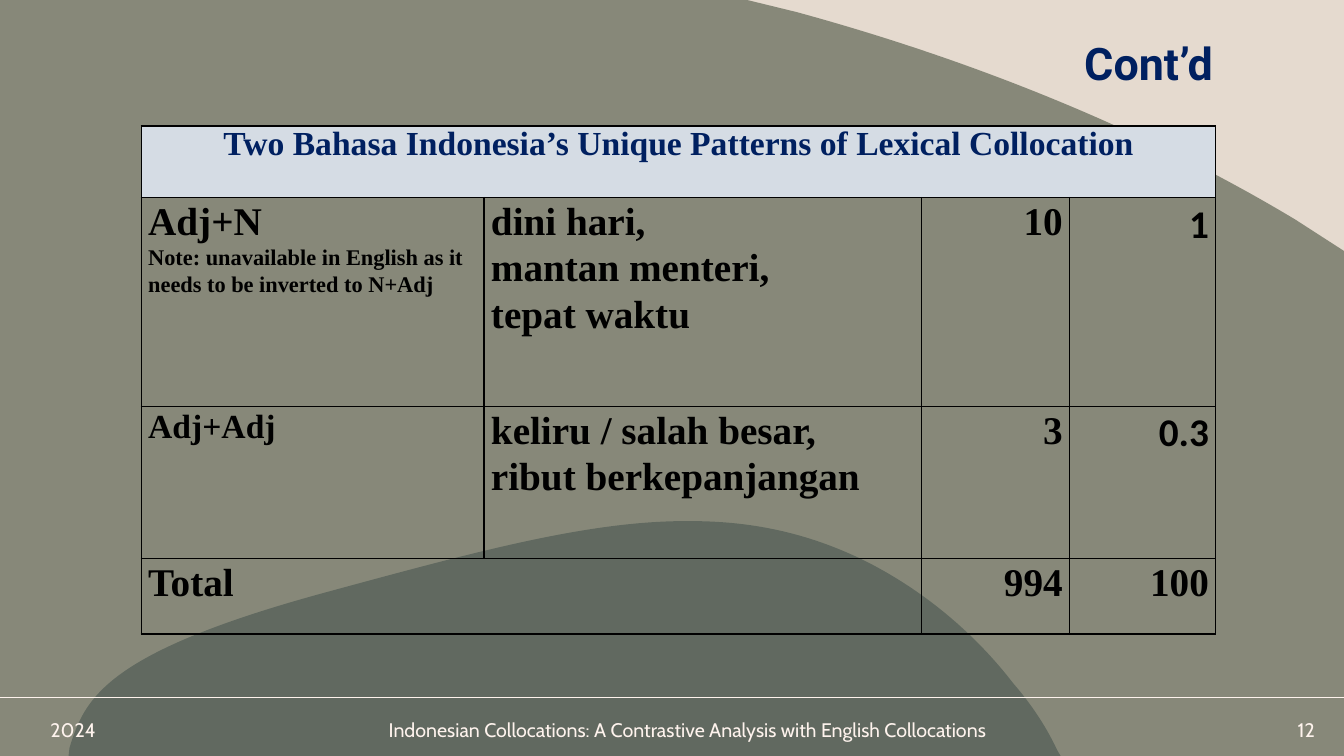
from lxml.etree import SubElement as Sub
from pptx import Presentation
from pptx.dml.color import RGBColor
from pptx.enum.text import MSO_ANCHOR as Anchor, PP_ALIGN as Align
from pptx.oxml.ns import qn
from pptx.util import Inches, Pt

SAND = RGBColor(0xE5, 0xDA, 0xCF)
SLATE = RGBColor(0x5D, 0x6A, 0x76)
OLIVE = RGBColor(0x4E, 0x57, 0x45)
CREAM = RGBColor(0xFE, 0xF3, 0xED)
NAVY = RGBColor(0x00, 0x20, 0x60)
PALE = RGBColor(0xD5, 0xDC, 0xE4)
BLACK = RGBColor(0, 0, 0)
SERIF = "Times New Roman"

HILL = [[(6.85, 5.17)],
        [(7.44, 5.17), (7.99, 5.28), (8.55, 5.55)],
        [(9.3, 5.92), (9.79, 6.44), (10.05, 6.78)],
        [(10.19, 6.94), (10.36, 7.17), (10.49, 7.45)],
        [(10.52, 7.5)], [(0.68, 7.5)], [(0.69, 7.42)],
        [(0.71, 7.35), (0.73, 7.29), (0.76, 7.22)],
        [(0.93, 6.8), (1.35, 6.39), (3.22, 5.88)],
        [(4.73, 5.47), (5.86, 5.16), (6.85, 5.17)]]
FIELD = [[(0, 0)], [(7.41, 0)], [(7.9, 0.12)],
         [(9.73, 0.62), (11.42, 1.32), (12.85, 2.18)],
         [(13.33, 2.49)], [(13.33, 7.5)], [(0, 7.5)]]

COLS = [3.4, 4.34, 1.47, 1.45]
ROWS = [0.71, 2.07, 1.51, 0.75]
CELLS = [
    [[("Two Bahasa Indonesia’s Unique Patterns of Lexical Collocation", 24)],
     [], [], []],
    [[("Adj+N", 28), ("Note: unavailable in English as it", 16),
      ("needs to be inverted to N+Adj", 16)],
     [("dini hari,", 28), ("mantan menteri,", 28), ("tepat waktu", 28)],
     [("10", 28)], [("1", 28)]],
    [[("Adj+Adj", 24)],
     [("keliru / salah besar,", 28), ("ribut berkepanjangan", 28)],
     [("3", 28)], [("0.3", 28)]],
    [[("Total", 28)], [], [("994", 28)], [("100", 28)]],
]


def bend(wave, parts):
    lines = list(wave._element.iter(qn("a:lnTo")))
    for line, part in zip(lines, parts):
        if len(part) == 1:
            continue
        line.tag = qn("a:cubicBezTo")
        for spot, (x, y) in enumerate(part[:2]):
            Sub(line, qn("a:pt"), x=str(Inches(x) - wave.left),
                y=str(Inches(y) - wave.top))
            line.insert(spot, line[-1])


def add_wave(slide, parts, color, alpha):
    first, *rest = [tuple(map(Inches, part[-1])) for part in parts]
    pen = slide.shapes.build_freeform(*first)
    pen.add_line_segments(rest, close=True)
    wave = pen.convert_to_shape()
    bend(wave, parts[1:])
    wave.shadow.inherit = False
    wave.line.fill.background()
    wave.fill.solid()
    wave.fill.fore_color.rgb = color
    tone = wave._element.spPr.find(qn("a:solidFill"))[0]
    Sub(tone, qn("a:alpha"), val=str(alpha * 1000))


def style(para, size, font, color, bold, align):
    para.alignment = align
    for run in para.runs:
        run.font.size = Pt(size)
        run.font.name = font
        run.font.color.rgb = color
        run.font.bold = bold


def add_label(slide, box, text, size, font, color, align, bold=False):
    frame = slide.shapes.add_textbox(*map(Inches, box)).text_frame
    frame.word_wrap = True
    frame.vertical_anchor = Anchor.MIDDLE
    frame.text = text
    style(frame.paragraphs[0], size, font, color, bold, align)
    return frame.paragraphs[0]


def add_back(slide, box):
    left, top, width, height = box
    slide.background.fill.solid()
    slide.background.fill.fore_color.rgb = SAND
    add_wave(slide, HILL, SLATE, 73)
    add_wave(slide, FIELD, OLIVE, 62)
    level = Inches(top + height - 0.58)
    rule = slide.shapes.add_connector(1, Inches(left), level,
                                      Inches(left + width), level)
    rule.line.color.rgb = CREAM
    rule.line.width = Pt(1.25)
    Sub(rule._element.spPr, qn("a:effectLst"))


def add_edges(cell):
    props = cell._tc.get_or_add_tcPr()
    for side in ("lnL", "lnR", "lnT", "lnB"):
        edge = Sub(props, qn("a:" + side), w=str(Pt(1)))
        Sub(Sub(edge, qn("a:solidFill")), qn("a:srgbClr"), val=str(BLACK))


def fill_cell(cell, lines, row, col):
    cell.margin_left = cell.margin_right = Inches(0.07)
    cell.margin_top = cell.margin_bottom = 0
    add_edges(cell)
    if row == 0:
        cell.fill.solid()
        cell.fill.fore_color.rgb = PALE
    else:
        cell.fill.background()
    if not lines:
        return
    align = Align.CENTER if row == 0 else Align.RIGHT if col > 1 else Align.JUSTIFY
    font = "Calibri" if col == 3 and row < 3 else SERIF
    cell.text_frame.text = "\n".join(text for text, _ in lines)
    for para, (_, size) in zip(cell.text_frame.paragraphs, lines):
        style(para, size, font, BLACK if row else NAVY, True, align)
        if row:
            para.line_spacing = 1.07


def add_grid(slide, box):
    table = slide.shapes.add_table(len(ROWS), len(COLS), *map(Inches, box)).table
    table.first_row = table.horz_banding = False
    for col, width in zip(table.columns, COLS):
        col.width = Inches(width)
    for row, height in zip(table.rows, ROWS):
        row.height = Inches(height)
    for r, line in enumerate(CELLS):
        for c, lines in enumerate(line):
            fill_cell(table.cell(r, c), lines, r, c)
    table.cell(0, 0).merge(table.cell(0, 3))
    table.cell(3, 0).merge(table.cell(3, 1))


def add_foot(slide, box):
    left, top, width, height = box
    notes = [
        (0, 1.08, "2024", Align.LEFT),
        (2.83, 7.18, "Indonesian Collocations: A Contrastive Analysis "
                     "with English Collocations", Align.CENTER),
        (width - 1.08, 1.08, "12", Align.RIGHT),
    ]
    for shift, wide, text, align in notes:
        add_label(slide, (left + shift, top, wide, height), text, 14,
                  "Cabin", CREAM, align)


def main():
    deck = Presentation()
    deck.slide_width = Inches(13.33)
    deck.slide_height = Inches(7.5)
    slide = deck.slides.add_slide(deck.slide_layouts[6])
    add_back(slide, (0, 0, 13.33, 7.5))
    title = add_label(slide, (0.63, 0.18, 11.5, 0.95), "Cont’d", 32,
                      "Roboto", NAVY, Align.RIGHT, True)
    title.line_spacing = 0.9
    add_grid(slide, (1.4, 1.25, sum(COLS), sum(ROWS)))
    add_foot(slide, (0.4, 7.07, 12.74, 0.34))
    deck.save("out.pptx")


if __name__ == "__main__":
    main()
